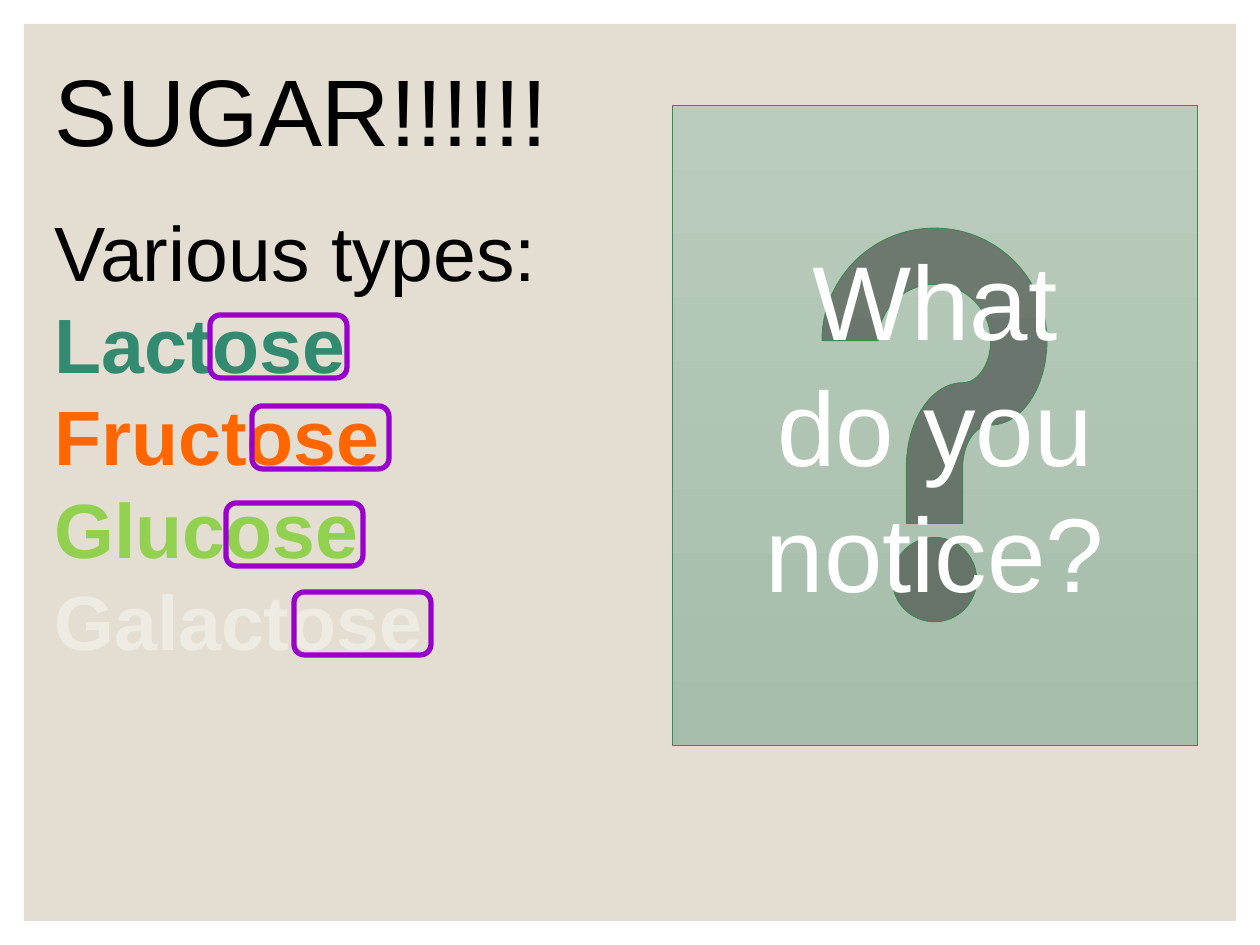
import dataclasses

import pptx
import pptx.dml.color
import pptx.enum.shapes
import pptx.enum.text
import pptx.util

SHAPE = pptx.enum.shapes.MSO_SHAPE
ALIGN = pptx.enum.text.PP_ALIGN
EMU_PER_PX = 914400 / 126


@dataclasses.dataclass(frozen=True)
class Theme:
    font: str = "Arial"
    backdrop: str = "E3DED1"
    ink: str = "000000"
    light: str = "FFFFFF"
    ring: str = "9900CC"
    button_edge: str = "3E8853"
    button_top: str = "BACCBD"
    button_bottom: str = "A6BDAB"
    lactose: str = "328B71"
    fructose: str = "FF6600"
    glucose: str = "92D050"
    galactose: str = "EEEBE3"
    title_size: int = 54
    body_size: int = 44
    question_size: int = 60
    title_gap: int = 22
    line_height: float = 1.2


def px(length):
    return pptx.util.Emu(round(length * EMU_PER_PX))


def rgb(color):
    return pptx.dml.color.RGBColor.from_string(color)


def write(para, text, *, theme, size, color, bold=False, align=ALIGN.LEFT, before=0):
    para.alignment = align
    para.line_spacing = pptx.util.Pt(size * theme.line_height)
    para.space_before = pptx.util.Pt(before)
    span = para.add_run()
    span.text = text
    span.font.name = theme.font
    span.font.size = pptx.util.Pt(size)
    span.font.bold = bold
    span.font.color.rgb = rgb(color)


class Painter:
    def __init__(self, theme, page):
        self.theme = theme
        self.page = page

    def shape(self, kind, left, top, width, height, fill=None, line=None, weight=1):
        shape = self.page.shapes.add_shape(kind, px(left), px(top), px(width), px(height))
        shape.shadow.inherit = False
        if fill is None:
            shape.fill.background()
        elif isinstance(fill, tuple):
            shape.fill.gradient()
            shape.fill.gradient_angle = 270
            for stop, color in zip(shape.fill.gradient_stops, fill):
                stop.color.rgb = rgb(color)
        else:
            shape.fill.solid()
            shape.fill.fore_color.rgb = rgb(fill)
        if line is None:
            shape.line.fill.background()
        else:
            shape.line.color.rgb = rgb(line)
            shape.line.width = pptx.util.Pt(weight)
        return shape

    def text(self, left, top, width, height, lines):
        box = self.page.shapes.add_textbox(px(left), px(top), px(width), px(height))
        frame = box.text_frame
        frame.word_wrap = True
        for index, (text, style) in enumerate(lines):
            para = frame.add_paragraph() if index else frame.paragraphs[0]
            write(para, text, theme=self.theme, **style)
        return box


def main():
    theme = Theme()
    deck = pptx.Presentation()
    deck.slide_width, deck.slide_height = px(1260), px(945)
    page = deck.slides.add_slide(deck.slide_layouts[6])
    painter = Painter(theme, page)

    painter.shape(SHAPE.RECTANGLE, 24, 24, 1212, 897, fill=theme.backdrop)

    sugars = [
        ("Lactose", theme.lactose, 210, 315),
        ("Fructose", theme.fructose, 252, 406),
        ("Glucose", theme.glucose, 226, 503),
        ("Galactose", theme.galactose, 294, 592),
    ]
    lines = [
        ("SUGAR!!!!!!", dict(size=theme.title_size, color=theme.ink)),
        ("Various types:", dict(size=theme.body_size, color=theme.ink, before=theme.title_gap)),
    ]
    lines += [
        (name, dict(size=theme.body_size, color=color, bold=True))
        for name, color, _, _ in sugars
    ]
    painter.text(42, 46, 546, 632, lines)

    painter.shape(
        SHAPE.ACTION_BUTTON_HELP, 672, 105, 525, 640,
        fill=(theme.button_top, theme.button_bottom), line=theme.button_edge, weight=0.5,
    )
    question = dict(size=theme.question_size, color=theme.light, align=ALIGN.CENTER)
    painter.text(730, 229, 410, 394, [("What do you notice?", question)])

    for _, _, left, top in sugars:
        painter.shape(SHAPE.ROUNDED_RECTANGLE, left, top, 137, 63, line=theme.ring, weight=3)

    deck.save("out.pptx")


if __name__ == "__main__":
    main()
